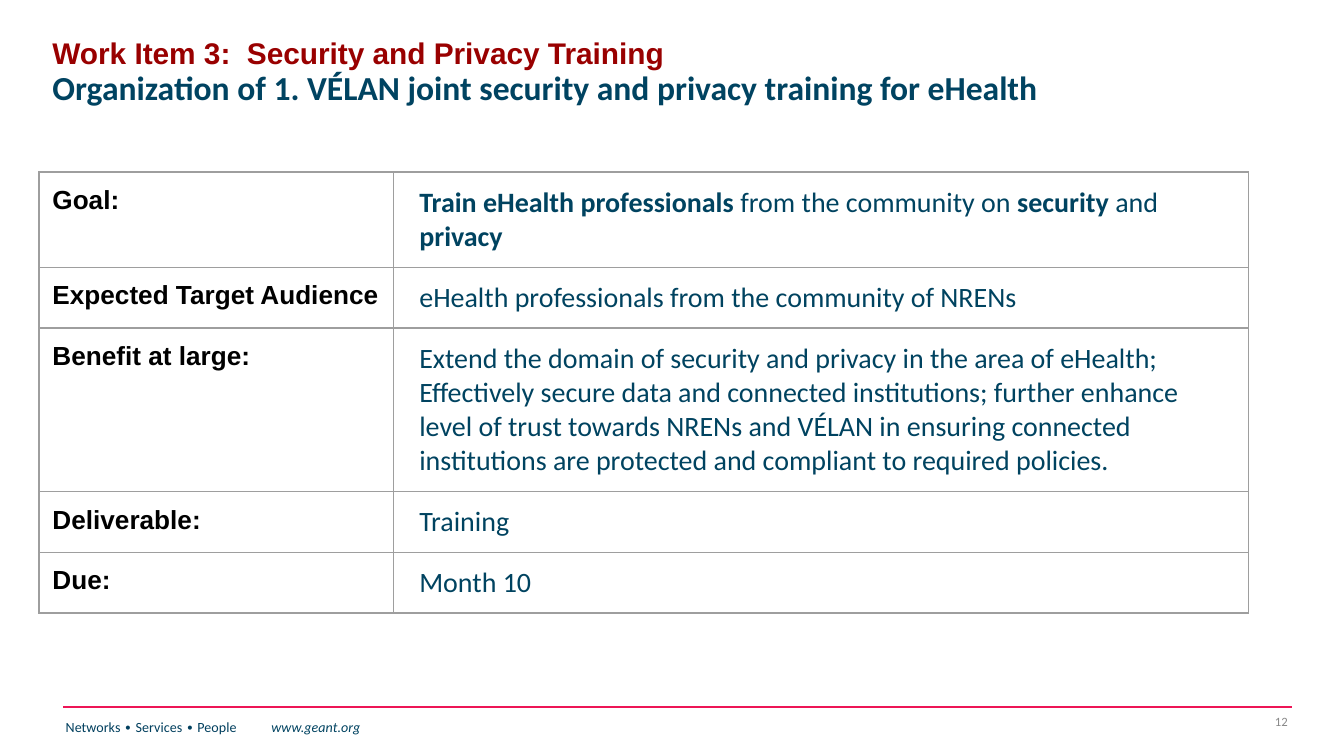
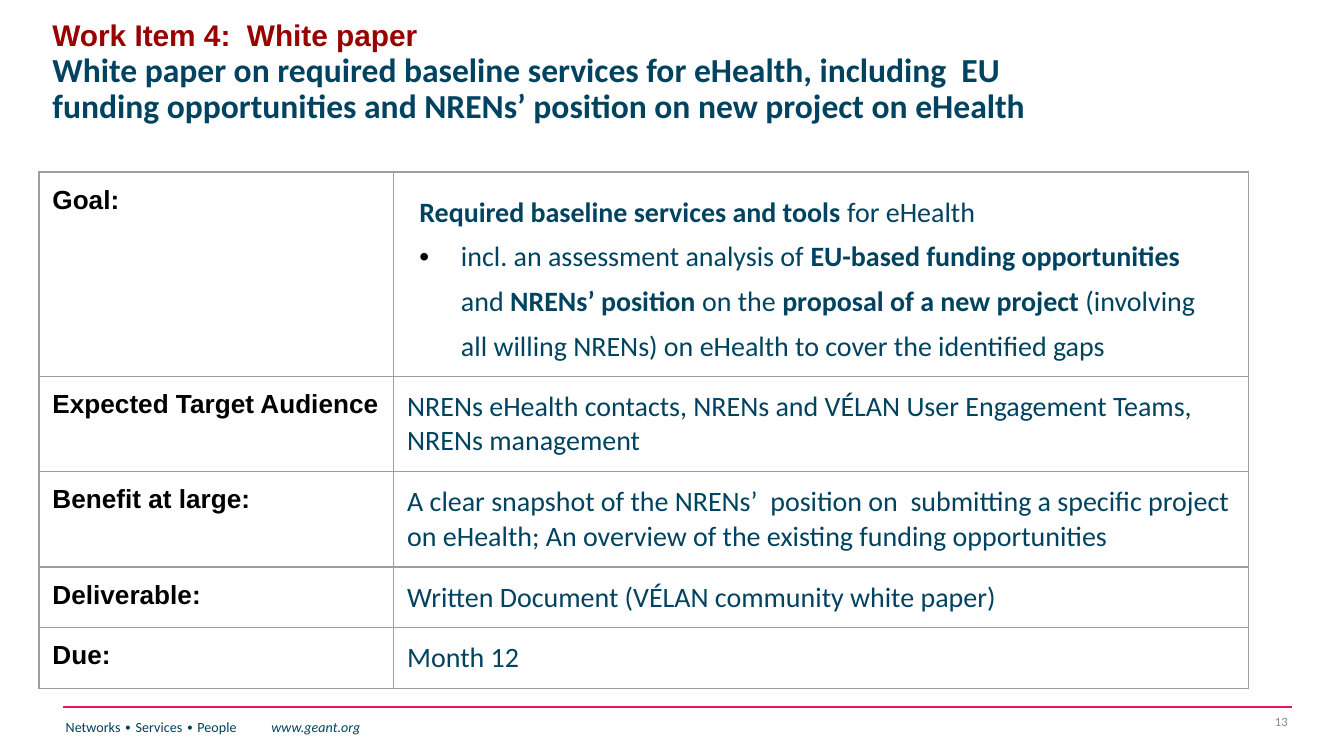
from lxml import etree
from pptx import Presentation
from pptx import util as u
from pptx.dml.color import RGBColor
from pptx.enum import shapes, text
from pptx.oxml.ns import qn

# Content: **double stars** mark bold spans, a leading "• " marks a bullet
LABELS = ["Goal:", "Expected Target Audience", "Benefit at large:", "Deliverable:", "Due:"]
FIRST_NUMBER = 12
WORK_ITEMS = [
    {
        "heading": "Work Item 3:  Security and Privacy Training",
        "subject": "Organization of 1. VÉLAN joint security and privacy training for eHealth",
        "title_box": (0.29, 0.28, 8.6, 0.81),
        "title_anchor": text.MSO_ANCHOR.TOP,
        "title_inset": 0.01,
        "indent": 0.09,
        "goal_spacing": 1.0,
        "goal_inset": 0.1,
        "heights": [0.71, 0.45, 1.22, 0.45, 0.45],
        "answers": [
            ["**Train eHealth professionals **from the community on **security** and **privacy**"],
            ["eHealth professionals from the community of NRENs"],
            ["Extend the domain of security and privacy in the area of eHealth; "
             "Effectively secure data and connected institutions; further enhance "
             "level of trust towards NRENs and VÉLAN in ensuring connected "
             "institutions are protected and compliant to required policies."],
            ["Training"],
            ["Month 10"],
        ],
    },
    {
        "heading": "Work Item 4:  White paper",
        "subject": "White paper on required baseline services for eHealth, including  EU "
                   "funding opportunities and NRENs’ position on new project on eHealth",
        "title_box": (0.29, 0, 7.88, 1.09),
        "title_anchor": text.MSO_ANCHOR.MIDDLE,
        "title_inset": 0.05,
        "indent": 0,
        "goal_spacing": 1.3,
        "goal_inset": 0.16,
        "heights": [1.52, 0.71, 0.71, 0.45, 0.45],
        "answers": [
            ["**Required baseline services and tools **for eHealth",
             "• incl. an assessment analysis of **EU-based funding opportunities **and "
             "**NRENs’ position **on the **proposal of a new project** (involving all "
             "willing NRENs) on eHealth to cover the identified gaps"],
            ["NRENs eHealth contacts, NRENs and VÉLAN User Engagement Teams, NRENs management"],
            ["A clear snapshot of the NRENs’  position on  submitting a specific project "
             "on eHealth; An overview of the existing funding opportunities"],
            ["Written Document (VÉLAN community white paper)"],
            ["Month 12"],
        ],
    },
]

# Shared style
RED, NAVY, CELL_NAVY, FOOTER_NAVY = "990000", "004361", "004360", "003F5E"
BLACK, GREY, BORDER, PINK = "000000", "888888", "9E9E9E", "ED1556"
TABLE_LEFT, TABLE_TOP, COLUMNS = 0.29, 1.28, (2.64, 6.36)
GOAL_INDENT, BULLET_INDENT, BULLET_HANG = 0.09, 0.4, -0.31
PLAIN_TABLE = "{2D5ABB26-0587-4C30-8999-92F81FD0307C}"


def colour(value):
    return RGBColor.from_string(value)


def inches(*values):
    return [u.Inches(value) for value in values]


def style(font, size, face, value, bold=False, italic=False):
    font.size, font.name = u.Pt(size), face
    font.color.rgb = colour(value)
    font.bold, font.italic = bold, italic


def add_xml(parent, tag, **attributes):
    return etree.SubElement(parent, qn(tag), attributes)


def add_box(page, *place):
    box = page.shapes.add_textbox(*inches(*place))
    box.text_frame.word_wrap = True
    return box


def add_footer(page, layout):
    """Build the rule and footer text, then hand them to the layout."""
    rule = page.shapes.add_connector(shapes.MSO_CONNECTOR.STRAIGHT,
                                     *inches(0.47, 5.26, 9.61, 5.26))
    rule.line.color.rgb, rule.line.width = colour(PINK), u.Pt(1)
    add_xml(rule.element.spPr, "a:effectLst")

    box = add_box(page, 0.39, 5.3, 3.41, 0.35)
    para = box.text_frame.paragraphs[0]
    tabs = add_xml(para._p.get_or_add_pPr(), "a:tabLst")
    add_xml(tabs, "a:tab", pos=str(u.Inches(1.53)), algn="l")
    for words, value, italic in (("Networks ∙ Services ∙ People\t", FOOTER_NAVY, False),
                                 ("www.geant.org", NAVY, True)):
        span = para.add_run()
        span.text = words
        style(span.font, 7.5, "Calibri", value, italic=italic)
    for shape in (rule, box):
        layout.shapes.element.append(shape.element)


def add_number(page, number):
    box = add_box(page, 9.07, 5.25, 0.61, 0.23)
    box.text_frame.vertical_anchor = text.MSO_ANCHOR.MIDDLE
    para = box.text_frame.paragraphs[0]
    para.alignment = text.PP_ALIGN.RIGHT
    span = para.add_run()
    span.text = str(number)
    style(span.font, 6.8, "Calibri", GREY)
    # Turn the run into a live slide number
    field = add_xml(para._p, "a:fld", type="slidenum",
                    id="{B6F15528-21DE-4FAA-801E-634DDDAF4B2B}")
    field.extend(list(span._r))
    para._p.remove(span._r)


def set_title(page, item):
    title = page.shapes.title
    title.left, title.top, title.width, title.height = inches(*item["title_box"])
    frame = title.text_frame
    frame.word_wrap, frame.auto_size = True, text.MSO_AUTO_SIZE.NONE
    frame.vertical_anchor = item["title_anchor"]
    frame.margin_top = frame.margin_bottom = u.Inches(item["title_inset"])
    para = frame.paragraphs[0]
    para.text = item["heading"] + "\v" + item["subject"]
    para.alignment, para.line_spacing = text.PP_ALIGN.LEFT, 0.9
    heading, subject = para.runs
    style(heading.font, 16, "Arial", RED, bold=True)
    style(subject.font, 18, "Calibri", NAVY, bold=True)
    add_xml(para._p.find(qn("a:br")), "a:rPr", sz="1600")


def format_cell(cell, right_inset=0.1):
    cell.margin_left = cell.margin_top = cell.margin_bottom = u.Inches(0.1)
    cell.margin_right = u.Inches(right_inset)
    properties = cell._tc.get_or_add_tcPr()
    for side in "LRTB":
        line = add_xml(properties, "a:ln" + side, w=str(u.Pt(0.75)))
        add_xml(add_xml(line, "a:solidFill"), "a:srgbClr", val=BORDER)
    cell.fill.background()


def write_answer(para, words, indent, spacing):
    para.line_spacing = spacing
    properties = para._p.get_or_add_pPr()
    hang = 0
    if words.startswith("• "):
        words, indent, hang = words[2:], BULLET_INDENT, BULLET_HANG
        add_xml(add_xml(properties, "a:buClr"), "a:srgbClr", val=BLACK)
        add_xml(properties, "a:buFont", typeface="Arial")
        add_xml(properties, "a:buChar", char="•")
    properties.set("marL", str(u.Inches(indent)))
    properties.set("indent", str(u.Inches(hang)))
    for index, part in enumerate(words.split("**")):
        if part:
            span = para.add_run()
            span.text = part
            style(span.font, 15, "Calibri", CELL_NAVY, bold=index % 2 == 1)


def add_item_table(page, item):
    heights = item["heights"]
    frame = page.shapes.add_table(len(LABELS), len(COLUMNS), *inches(
        TABLE_LEFT, TABLE_TOP, sum(COLUMNS), sum(heights)))
    table = frame.table
    table.first_row = table.horz_banding = False
    table._tbl.tblPr.find(qn("a:tableStyleId")).text = PLAIN_TABLE
    for column, width in zip(table.columns, COLUMNS):
        column.width = u.Inches(width)
    for row, height, label, answer in zip(table.rows, heights, LABELS, item["answers"]):
        row.height = u.Inches(height)
        label_cell, answer_cell = row.cells
        is_goal = label == LABELS[0]
        format_cell(label_cell)
        format_cell(answer_cell, item["goal_inset"] if is_goal else 0.1)
        label_cell.text_frame.text = label
        style(label_cell.text_frame.paragraphs[0].runs[0].font, 14, "Arial", BLACK, bold=True)
        indent = GOAL_INDENT if is_goal else item["indent"]
        spacing = item["goal_spacing"] if is_goal else 1.0
        body = answer_cell.text_frame
        for index, words in enumerate(answer):
            para = body.add_paragraph() if index else body.paragraphs[0]
            write_answer(para, words, indent, spacing)


def main():
    deck = Presentation()
    deck.slide_width = u.Inches(10)
    deck.slide_height = deck.slide_width * 9 // 16
    deck.element.set("firstSlideNum", str(FIRST_NUMBER))
    layout = deck.slide_layouts[5]
    for number, item in enumerate(WORK_ITEMS, FIRST_NUMBER):
        page = deck.slides.add_slide(layout)
        if number == FIRST_NUMBER:
            add_footer(page, layout)
        add_number(page, number)
        set_title(page, item)
        add_item_table(page, item)
    deck.save("out.pptx")


if __name__ == "__main__":
    main()
